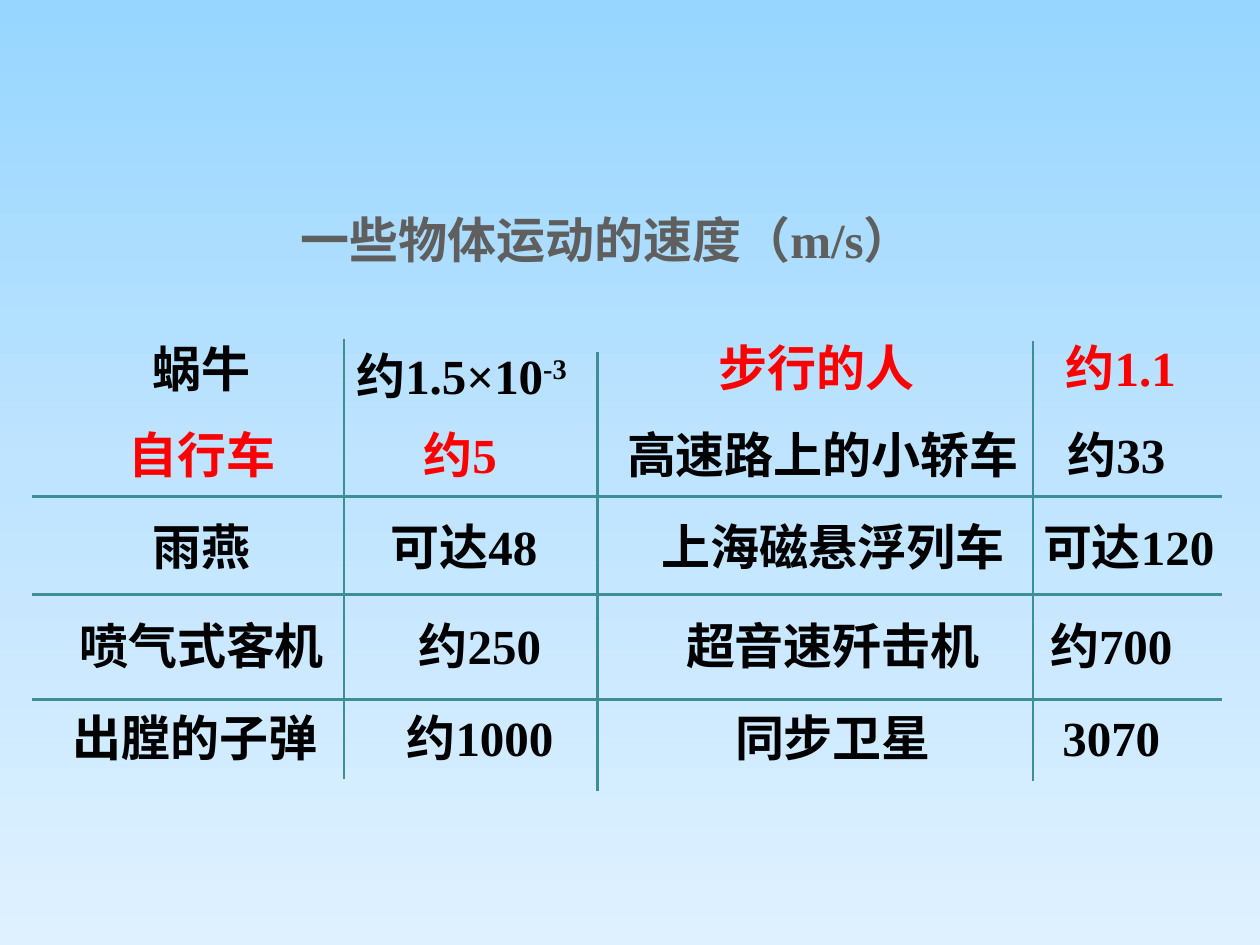
from copy import deepcopy

from pptx import Presentation
from pptx.dml.color import RGBColor
from pptx.enum.shapes import MSO_CONNECTOR
from pptx.enum.text import MSO_ANCHOR, PP_ALIGN
from pptx.oxml.ns import qn
from pptx.util import Inches, Pt

LINE = MSO_CONNECTOR.STRAIGHT
TOP, MIDDLE = MSO_ANCHOR.TOP, MSO_ANCHOR.MIDDLE
LEFT, CENTER = PP_ALIGN.LEFT, PP_ALIGN.CENTER

BLACK = RGBColor(0x00, 0x00, 0x00)
RED = RGBColor(0xFF, 0x00, 0x00)
GRAY = RGBColor(0x5F, 0x5F, 0x5F)
TEAL = RGBColor(0x3D, 0x8F, 0x95)
SKY = [
    RGBColor(0x97, 0xD6, 0xFF),
    RGBColor(0xBF, 0xE4, 0xFF),
    RGBColor(0xDF, 0xF1, 0xFF),
]


class Page:
    font = "Times New Roman"
    size = Pt(28)

    def __init__(self, slide):
        self.slide = slide

    def sky(self, colors):
        """Fill the background with a three-stop gradient from top to bottom."""
        fill = self.slide.background.fill
        fill.gradient()
        fill.gradient_angle = 270
        first = fill.gradient_stops[0]._gs
        first.addnext(deepcopy(first))
        for i, (stop, color) in enumerate(zip(fill.gradient_stops, colors)):
            stop.position = i / 2
            stop.color.rgb = color

    def text(self, words, x, y, w, h, color=BLACK, align=CENTER,
             anchor=MIDDLE, pad=0.1):
        """Add one line of text; pad is the left inset in inches."""
        box = self.slide.shapes.add_textbox(
            Inches(x), Inches(y), Inches(w), Inches(h))
        frame = box.text_frame
        frame.word_wrap = True
        frame.vertical_anchor = anchor
        frame.margin_left = Inches(pad)
        para = frame.paragraphs[0]
        para.alignment = align
        para.add_run().text = words
        font = para.font
        font.name, font.size, font.bold = self.font, self.size, True
        font.color.rgb = color
        return para

    def power(self, para, words):
        """Append a superscript."""
        run = para.add_run()
        run.text = words
        run._r.get_or_add_rPr().set("baseline", "30000")

    def line(self, x1, y1, x2, y2):
        rule = self.slide.shapes.add_connector(
            LINE, Inches(x1), Inches(y1), Inches(x2), Inches(y2))
        rule.line.color.rgb = TEAL
        rule.line.width = Pt(1.5)
        props = rule._element.spPr
        props.append(props.makeelement(qn("a:effectLst"), {}))


COLS = [(0.48, 2.24), (2.73, 2.16), (4.89, 3.44), (8.02, 1.6)]
ROWS = [(2.64, 0.58), (3.27, 0.67), (3.94, 0.78), (4.72, 0.79), (5.51, 0.67)]
SPEEDS = [
    ["蜗牛", "约1.5×10", "步行的人", "约1.1"],
    ["自行车", "约5", "高速路上的小轿车", "约33"],
    ["雨燕", "可达48", "上海磁悬浮列车", "可达120"],
    ["喷气式客机", "约250", "超音速歼击机", "约700"],
    ["出膛的子弹", "约1000", "同步卫星", "3070"],
]
MARKED = {"自行车", "约5", "步行的人", "约1.1"}
# Cells that leave the grid: their own box, inset or alignment
SPECIAL = {
    "约1.5×10": dict(y=2.69, w=2.48, align=LEFT),
    "步行的人": dict(x=4.5, y=2.63, pad=0.62),
    "约1.1": dict(x=8.36, y=2.63, w=1.18, align=LEFT),
    "约5": dict(w=2.32, align=LEFT, pad=0.63),
    "高速路上的小轿车": dict(x=4.81),
    "约33": dict(pad=0.18),
    "可达48": dict(align=LEFT, pad=0.37),
    "可达120": dict(x=8.18, w=1.88, align=LEFT),
    "出膛的子弹": dict(align=LEFT),
}


def main():
    deck = Presentation()
    deck.slide_width, deck.slide_height = Inches(10), Inches(7.5)
    page = Page(deck.slides.add_slide(deck.slide_layouts[6]))
    page.sky(SKY)
    page.text("一些物体运动的速度（m/s）", 2.29, 1.61, 6.05, 0.57,
              color=GRAY, align=LEFT, anchor=TOP)

    for (y, h), row in zip(ROWS, SPEEDS):
        for (x, w), words in zip(COLS, row):
            cell = dict(x=x, y=y, w=w, h=h)
            cell["color"] = RED if words in MARKED else BLACK
            cell["anchor"] = TOP if row is SPEEDS[0] else MIDDLE
            cell.update(SPECIAL.get(words, {}))
            para = page.text(words, **cell)
            if words == "约1.5×10":
                page.power(para, "-3")

    for y in (3.94, 4.72, 5.55):
        page.line(0.25, y, 9.7, y)
    for x, y in ((2.73, 2.69), (4.74, 2.79), (8.2, 2.71)):
        page.line(x, y, x, y + 3.49)

    deck.save("out.pptx")


if __name__ == "__main__":
    main()
